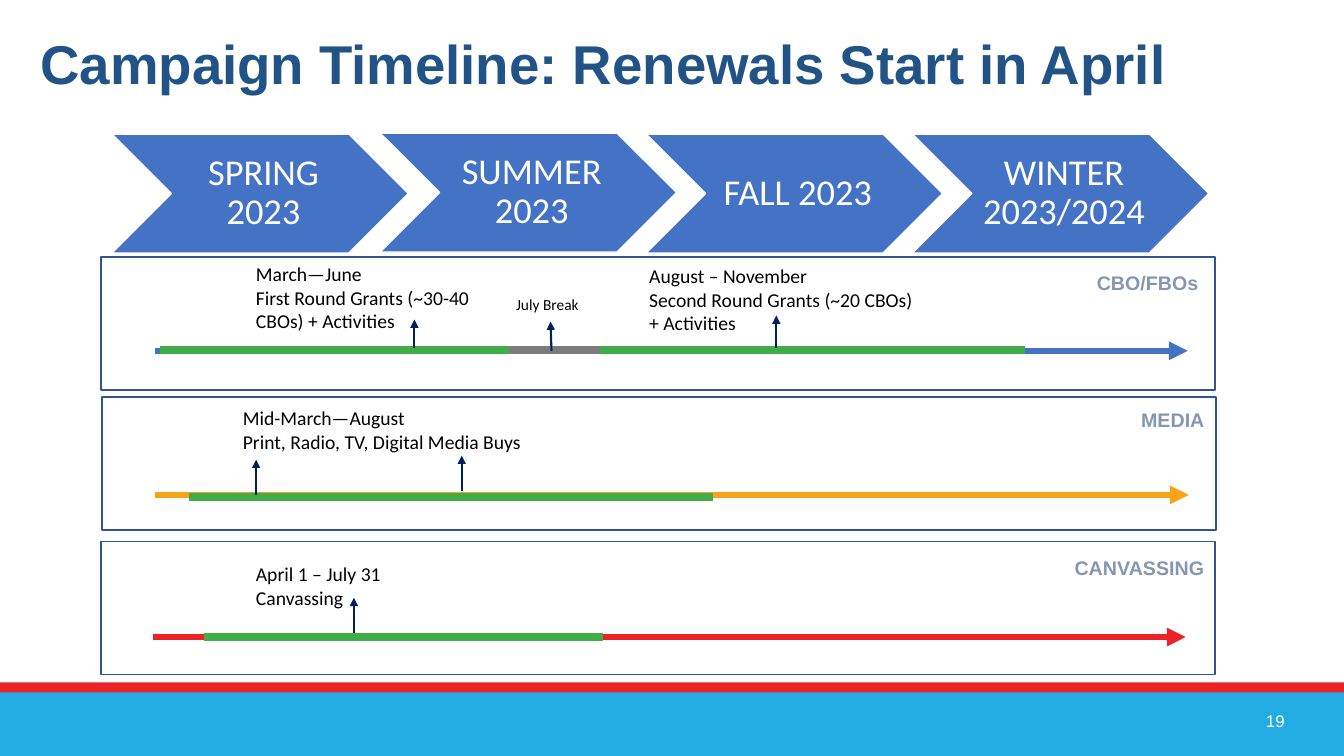
import pptx
import pptx.util
import pptx.dml.color
import pptx.enum.shapes
import pptx.enum.text
import pptx.oxml.ns
import lxml.etree

SHAPE = pptx.enum.shapes.MSO_SHAPE
ALIGN = pptx.enum.text.PP_ALIGN
ANCHOR = pptx.enum.text.MSO_ANCHOR

COLOURS = {
    "white": "FFFFFF", "black": "000000", "title": "215386", "label": "8497B0",
    "blue": "4472C4", "red": "EB2327", "orange": "F6A419", "green": "40AD49",
    "grey": "7C7C7C", "navy": "002060", "frame": "325491", "sky": "23ABE3",
}

SEASONS = [
    (111, 133, "SPRING 2023"),
    (377, 132, "SUMMER 2023"),
    (641, 133, "FALL 2023"),
    (905, 133, "WINTER 2023/2024"),
]

# Bars are (start, end, colour); markers are (x, bottom, x at tip, tip);
# notes are (left, top, width, height, size, paragraphs).
LANES = [
    {
        "panel": (100, 255), "label": ("CBO/FBOs", 1078, 264, 122),
        "axis": (154, 1178, 348, "blue"), "bar_y": 347,
        "bars": [(159, 505, "green"), (595, 1017, "green"), (505, 595, "grey")],
        "markers": [(411, 345, 411, 317), (770, 345, 770, 313), (547, 348, 546, 319)],
        "notes": [
            (244, 255, 277, 81, 14,
             ["March—June", "First Round Grants (~30-40 CBOs) + Activities"]),
            (502, 288, 114, 29, 11, ["July Break"]),
            (634, 257, 289, 81, 14,
             ["August – November", "Second Round Grants (~20 CBOs) + Activities"]),
        ],
    },
    {
        "panel": (101, 394), "label": ("MEDIA", 1122, 400, 83),
        "axis": (154, 1179, 491, "orange"), "bar_y": 493,
        "bars": [(187, 516, "green"), (480, 707, "green")],
        "markers": [(254, 491, 254, 456), (458, 487, 458, 452)],
        "notes": [(231, 398, 302, 57, 14,
                   ["Mid-March—August", "Print, Radio, TV, Digital Media Buys"])],
    },
    {
        "panel": (100, 537), "label": ("CANVASSING", 1056, 547, 184),
        "axis": (152, 1176, 632, "red"), "bar_y": 632,
        "bars": [(202, 415, "green"), (411, 598, "green")],
        "markers": [(351, 628, 351, 593)],
        "notes": [(244, 553, 184, 57, 14, ["April 1 – July 31 Canvassing"])],
    },
]


def px(length):
    """Turn px, at 100 to the inch, into EMU."""
    return pptx.util.Emu(length * 9144)


def colour(name):
    return pptx.dml.color.RGBColor.from_string(COLOURS[name])


class TimelineSlide:
    """Holds the fonts and the page, and draws each kind of element on it."""

    heading_font = "Arial"
    note_font = "Calibri"

    def __init__(self, page):
        self.page = page

    def fill_text(self, frame, paragraphs, size, ink, font, bold=False,
                  align=ALIGN.LEFT, spacing=None):
        for index, words in enumerate(paragraphs):
            para = frame.paragraphs[0] if index == 0 else frame.add_paragraph()
            para.alignment = align
            if spacing:
                para.line_spacing = spacing
            span = para.add_run()
            span.text = words
            span.font.size = pptx.util.Pt(size)
            span.font.name = font
            span.font.bold = bold
            span.font.color.rgb = colour(ink)

    def title(self, words, left, top, width, height):
        box = self.page.shapes.title
        box.left, box.top, box.width, box.height = map(px, (left, top, width, height))
        box.text_frame.auto_size = pptx.enum.text.MSO_AUTO_SIZE.NONE
        box.text_frame.vertical_anchor = ANCHOR.MIDDLE
        self.fill_text(box.text_frame, [words], 39, "title", self.heading_font,
                       bold=True, spacing=0.8)

    def text(self, paragraphs, left, top, width, height, size, ink, font,
             anchor=ANCHOR.TOP, wrap=True, **style):
        box = self.page.shapes.add_textbox(*map(px, (left, top, width, height)))
        box.text_frame.word_wrap = wrap
        box.text_frame.vertical_anchor = anchor
        self.fill_text(box.text_frame, paragraphs, size, ink, font, **style)

    def shape(self, kind, left, top, width, height, fill=None, line=None):
        shape = self.page.shapes.add_shape(kind, *map(px, (left, top, width, height)))
        shape.shadow.inherit = False
        if fill:
            shape.fill.solid()
            shape.fill.fore_color.rgb = colour(fill)
        else:
            shape.fill.background()
        if line:
            shape.line.color.rgb = colour(line)
            shape.line.width = pptx.util.Pt(1)
        else:
            shape.line.fill.background()
        return shape

    def season(self, left, top, words):
        chevron = self.shape(SHAPE.CHEVRON, left, top, 294, 118, "blue", "white")
        frame = chevron.text_frame
        frame.word_wrap = True
        frame.vertical_anchor = ANCHOR.MIDDLE
        frame.margin_left = px(11)
        frame.margin_right = frame.margin_top = frame.margin_bottom = px(4)
        self.fill_text(frame, [words], 26, "white", self.note_font,
                       align=ALIGN.CENTER, spacing=0.9)

    def line(self, start, end, ink, weight, arrow=False):
        connector = self.page.shapes.add_connector(
            pptx.enum.shapes.MSO_CONNECTOR.STRAIGHT, *map(px, start + end))
        connector.line.color.rgb = colour(ink)
        connector.line.width = pptx.util.Pt(weight)
        qn = pptx.oxml.ns.qn
        properties = connector._element.spPr
        if arrow:
            lxml.etree.SubElement(properties.find(qn("a:ln")), qn("a:tailEnd"),
                                  type="triangle")
        lxml.etree.SubElement(properties, qn("a:effectLst"))

    def lane(self, lane):
        self.shape(SHAPE.RECTANGLE, *lane["panel"], 1105, 132, line="frame")
        start, end, y, ink = lane["axis"]
        self.line((start, y), (end, y), ink, 4.5, arrow=True)
        for start, end, ink in lane["bars"]:
            self.line((start, lane["bar_y"]), (end, lane["bar_y"]), ink, 6)
        for x, bottom, tip_x, tip in lane["markers"]:
            self.line((x, bottom), (tip_x, tip), "navy", 1.5, arrow=True)
        for left, top, width, height, size, paragraphs in lane["notes"]:
            self.text(paragraphs, left, top, width, height, size, "black",
                      self.note_font)
        words, left, top, width = lane["label"]
        self.text([words], left, top, width, 34, 14, "label", self.heading_font,
                  wrap=False, bold=True)


def main():
    deck = pptx.Presentation()
    deck.slide_width, deck.slide_height = px(1333), px(750)
    timeline = TimelineSlide(deck.slides.add_slide(deck.slide_layouts[5]))

    timeline.shape(SHAPE.RECTANGLE, 0, 677, 1333, 25, "red")
    timeline.shape(SHAPE.RECTANGLE, 0, 687, 1333, 63, "sky")
    timeline.text(["19"], 1216, 695, 68, 40, 12, "white", timeline.heading_font,
                  anchor=ANCHOR.MIDDLE, align=ALIGN.RIGHT)
    timeline.title("Campaign Timeline: Renewals Start in April", 30, 34, 1173, 68)
    for lane in LANES:
        timeline.lane(lane)
    for left, top, words in SEASONS:
        timeline.season(left, top, words)

    deck.save("out.pptx")


if __name__ == "__main__":
    main()
